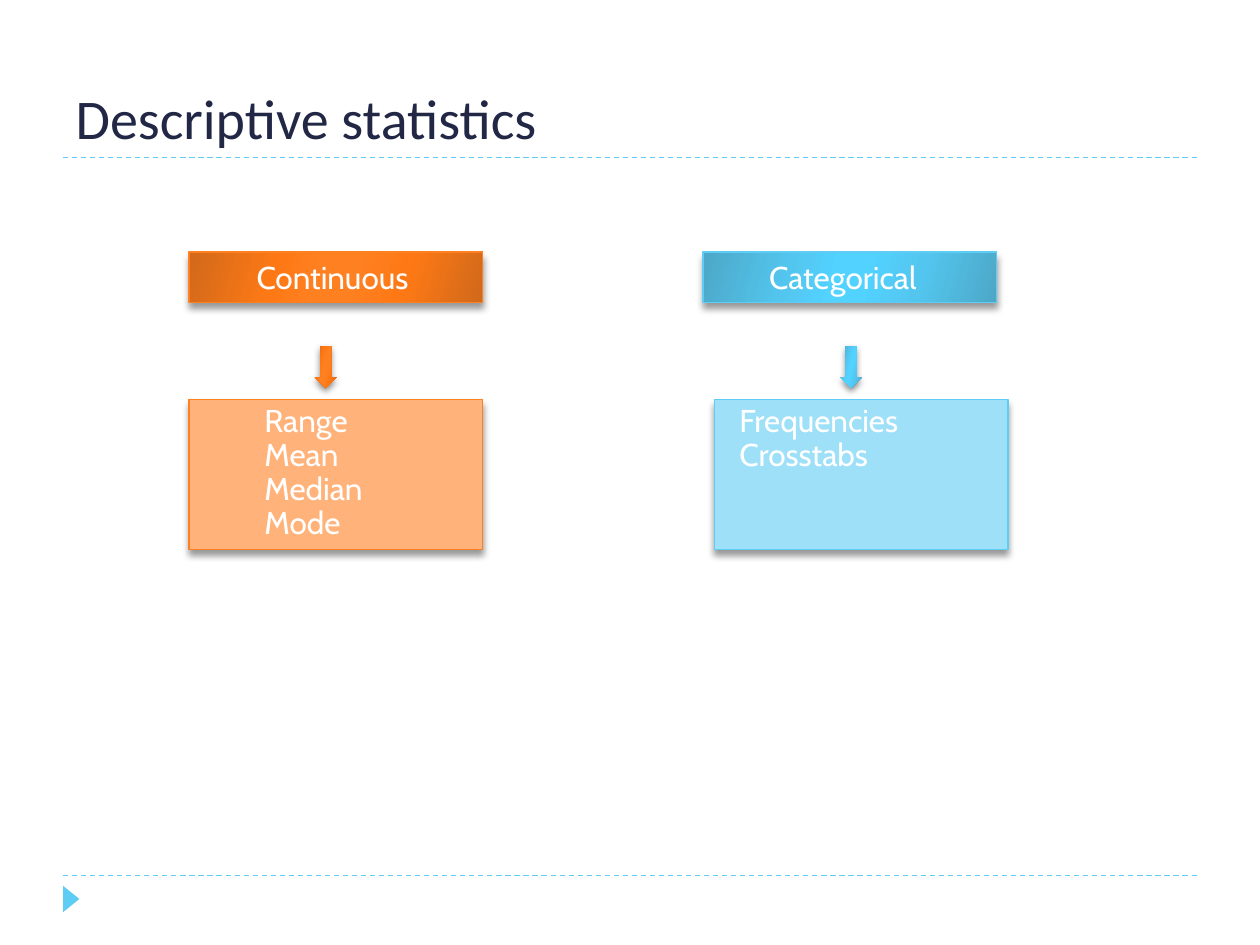
from lxml.etree import SubElement
from pptx import Presentation
from pptx.dml.color import RGBColor
from pptx.enum.dml import MSO_LINE
from pptx.enum.shapes import MSO_CONNECTOR, MSO_SHAPE
from pptx.enum.text import MSO_ANCHOR, MSO_AUTO_SIZE, PP_ALIGN
from pptx.oxml.ns import qn
from pptx.util import Inches, Pt

# Content: positions and indents in inches
TITLE = "Descriptive statistics"
BRANCHES = [
    {"name": "Continuous", "items": ["Range", "Mean", "Median", "Mode"],
     "palette": "orange", "header_left": 1.5, "list_left": 1.5,
     "arrow_left": 2.5, "indent": 0.5, "header_right_inset": 0.15},
    {"name": "Categorical", "items": ["Frequencies", "Crosstabs"],
     "palette": "blue", "header_left": 5.58, "list_left": 5.67,
     "arrow_left": 6.67, "indent": 0.1, "header_right_inset": 0.21},
]

THEME = {
    "title": {"name": "Calibri", "size": Pt(32), "color": "212745"},
    "body": {"name": "Cabin", "size": Pt(18), "color": "FFFFFF"},
    "accent": "5ECCF3",
    "line_width": Pt(0.75),
    "orange": {"edge": "D1691B", "middle": "FE7915", "centre": "FF8021",
               "line": "FF8021", "pale": "FFB37A"},
    "blue": {"edge": "4DA7C7", "middle": "53C6EF", "centre": "52D2FF",
             "line": "5ECCF3", "pale": "9EE0F8"},
}
GRADIENT_STOPS = [(0, "edge"), (30, "middle"), (45, "centre"),
                  (55, "centre"), (73, "middle"), (100, "edge")]
GRADIENT_ANGLE = 16
BOX_SHADOW = {"alpha": 40, "blur": 4, "distance": 3.4}
ARROW_SHADOW = {"alpha": 50, "blur": 4, "distance": 2}
BOX_WIDTH = 2.33


def format_font(font, style):
    for attribute in ("name", "size"):
        setattr(font, attribute, style[attribute])
    font.color.rgb = RGBColor.from_string(style["color"])


def add_shape(kind, left, top, width, height, line=None):
    shape = slide.shapes.add_shape(
        kind, Inches(left), Inches(top), Inches(width), Inches(height))
    shape.shadow.inherit = False
    if line:
        shape.line.color.rgb = RGBColor.from_string(line)
        shape.line.width = THEME["line_width"]
    else:
        shape.line.fill.background()
    return shape


def fill_solid(shape, color):
    shape.fill.solid()
    shape.fill.fore_color.rgb = RGBColor.from_string(color)


def fill_gradient(shape, palette):
    shape.fill.gradient()
    shape.fill.gradient_angle = 360 - GRADIENT_ANGLE
    stops = shape._element.spPr.find(qn("a:gradFill")).find(qn("a:gsLst"))
    for stop in list(stops):
        stops.remove(stop)
    for position, tone in GRADIENT_STOPS:
        stop = SubElement(stops, qn("a:gs"), pos=str(position * 1000))
        SubElement(stop, qn("a:srgbClr"), val=palette[tone])


def add_shadow(shape, shadow):
    effects = shape._element.spPr.find(qn("a:effectLst"))
    outer = SubElement(
        effects, qn("a:outerShdw"), blurRad=str(Pt(shadow["blur"])),
        dist=str(Pt(shadow["distance"])), dir="5400000", rotWithShape="0")
    color = SubElement(outer, qn("a:srgbClr"), val="000000")
    SubElement(color, qn("a:alpha"), val=str(shadow["alpha"] * 1000))


def write_lines(shape, lines, alignment, indent=0, spacing=None):
    frame = shape.text_frame
    frame.word_wrap = True
    frame.auto_size = MSO_AUTO_SIZE.SHAPE_TO_FIT_TEXT
    frame.vertical_anchor = MSO_ANCHOR.TOP
    frame.text = "\n".join(lines)
    for paragraph in frame.paragraphs:
        paragraph.alignment = alignment
        paragraph.line_spacing = spacing
        if indent:
            paragraph.level = 1
            paragraph._p.get_or_add_pPr().set("marL", str(Inches(indent)))
        format_font(paragraph.runs[0].font, THEME["body"])


presentation = Presentation()
presentation.slide_width, presentation.slide_height = Inches(10), Inches(7.5)
slide = presentation.slides.add_slide(presentation.slide_layouts[5])

# Dashed rules and corner marker
for y in (6.95, 1.25):
    rule = slide.shapes.add_connector(
        MSO_CONNECTOR.STRAIGHT, Inches(0.5), Inches(y), Inches(9.5), Inches(y))
    rule.line.color.rgb = RGBColor.from_string(THEME["accent"])
    rule.line.width = THEME["line_width"]
    rule.line.dash_style = MSO_LINE.DASH
    SubElement(rule._element.spPr, qn("a:effectLst"))
marker = add_shape(MSO_SHAPE.ISOSCELES_TRIANGLE, 0.46, 7.07, 0.21, 0.13)
marker.rotation = 90
fill_solid(marker, THEME["accent"])

# Title
title = slide.shapes.title
title.left, title.top = Inches(0.5), Inches(0.17)
title.width, title.height = Inches(9), Inches(1.08)
title.text_frame.text = TITLE
title.text_frame.vertical_anchor = MSO_ANCHOR.BOTTOM
title_paragraph = title.text_frame.paragraphs[0]
title_paragraph.alignment = PP_ALIGN.LEFT
format_font(title_paragraph.runs[0].font, THEME["title"])

# Each branch: header, arrow, list of statistics
for branch in BRANCHES:
    palette = THEME[branch["palette"]]

    header = add_shape(MSO_SHAPE.RECTANGLE, branch["header_left"], 2,
                       BOX_WIDTH, 0.4, palette["line"])
    fill_gradient(header, palette)
    add_shadow(header, BOX_SHADOW)
    write_lines(header, [branch["name"]], PP_ALIGN.CENTER)
    header.text_frame.margin_right = Inches(branch["header_right_inset"])

    statistics = add_shape(MSO_SHAPE.RECTANGLE, branch["list_left"], 3.17,
                           BOX_WIDTH, 1.19, palette["line"])
    fill_solid(statistics, palette["pale"])
    add_shadow(statistics, BOX_SHADOW)
    write_lines(statistics, branch["items"], PP_ALIGN.LEFT,
                branch["indent"], 0.9)

    arrow = add_shape(MSO_SHAPE.DOWN_ARROW, branch["arrow_left"], 2.75,
                      0.17, 0.33)
    fill_gradient(arrow, palette)
    add_shadow(arrow, ARROW_SHADOW)

presentation.save("out.pptx")
